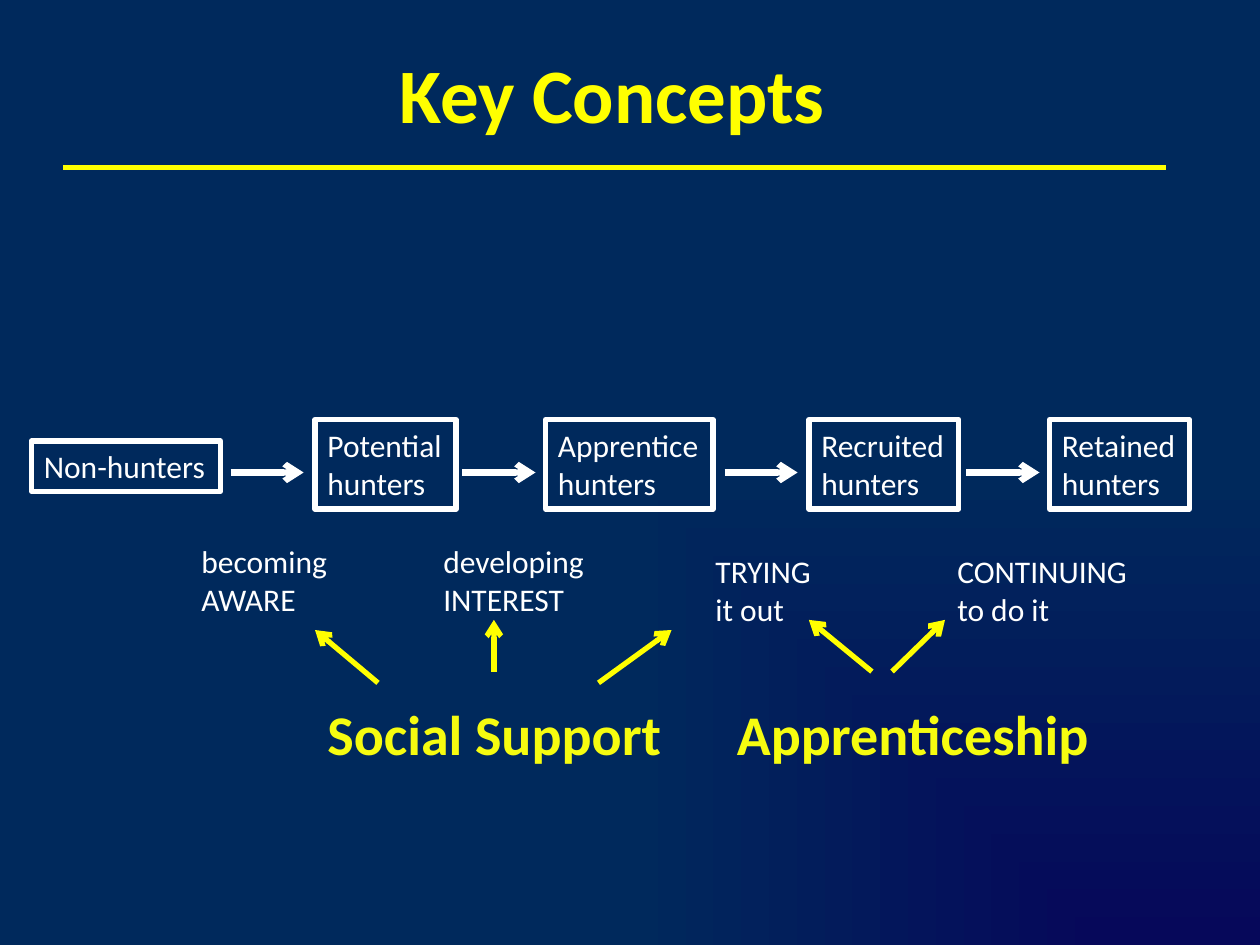
from pptx import Presentation
from pptx.dml.color import RGBColor
from pptx.enum.shapes import MSO_CONNECTOR as Connector, MSO_SHAPE as Shape
from pptx.enum.text import MSO_ANCHOR as Anchor, MSO_AUTO_SIZE as AutoSize, PP_ALIGN as Align
from pptx.oxml import parse_xml
from pptx.oxml.ns import nsdecls, qn
from pptx.util import Inches, Pt

COLORS = {"navy": "06085A", "blue": "00295C", "yellow": "FFFF00",
          "lemon": "F6FC10", "white": "FFFFFF"}


class SlideBuilder:
    """Holds the slide and the style shared by its elements."""

    font_name = "Calibri"

    def __init__(self, slide):
        self.slide = slide

    def color(self, name):
        return RGBColor.from_string(COLORS[name])

    def background(self, inner, outer):
        fill = self.slide.background.fill
        fill.gradient()
        for stop, name in zip(fill.gradient_stops, (inner, outer)):
            stop.color.rgb = self.color(name)
        # Spread the gradient from the bottom right corner
        gradient = self.slide.element.find(".//" + qn("a:gradFill"))
        gradient.replace(gradient.find(qn("a:lin")), parse_xml(
            f'<a:path {nsdecls("a")} path="rect">'
            '<a:fillToRect l="100000" t="100000"/></a:path>'))

    def set_text(self, frame, text, size, color, bold=False, align=Align.LEFT):
        frame.text = text
        for paragraph in frame.paragraphs:
            paragraph.alignment = align
            font = paragraph.font
            font.name, font.size, font.bold = self.font_name, Pt(size), bold
            font.color.rgb = self.color(color)

    def fit(self, frame):
        frame.word_wrap = False
        frame.auto_size = AutoSize.SHAPE_TO_FIT_TEXT
        frame.vertical_anchor = Anchor.TOP

    def title(self, text, left, top, width, height):
        title = self.slide.shapes.title
        title.left, title.top = Inches(left), Inches(top)
        title.width, title.height = Inches(width), Inches(height)
        frame = title.text_frame
        frame.vertical_anchor = Anchor.MIDDLE
        frame.margin_right = Inches(0.38)  # sets the heading left of centre
        self.set_text(frame, text, 44, "yellow", True, Align.CENTER)

    def box(self, text, left, top, width, height):
        shape = self.slide.shapes.add_shape(
            Shape.RECTANGLE, Inches(left), Inches(top), Inches(width), Inches(height))
        shape.shadow.inherit = False
        shape.fill.background()
        shape.line.color.rgb = self.color("white")
        shape.line.width = Pt(3)
        self.set_text(shape.text_frame, text, 18, "white")
        self.fit(shape.text_frame)

    def label(self, text, left, top, width, height, size=18, color="white", bold=False):
        shape = self.slide.shapes.add_textbox(
            Inches(left), Inches(top), Inches(width), Inches(height))
        self.set_text(shape.text_frame, text, size, color, bold)
        self.fit(shape.text_frame)

    def line(self, start, end, color="yellow", width=3, arrow=True):
        connector = self.slide.shapes.add_connector(
            Connector.STRAIGHT, *map(Inches, start + end))
        connector.line.color.rgb = self.color(color)
        connector.line.width = Pt(width)
        properties = connector.element.spPr
        if arrow:
            properties.find(qn("a:ln")).append(
                parse_xml(f'<a:tailEnd {nsdecls("a")} type="arrow"/>'))
        properties.append(parse_xml(f'<a:effectLst {nsdecls("a")}/>'))


def main():
    presentation = Presentation()
    presentation.slide_width, presentation.slide_height = Inches(10), Inches(7.5)
    slide = presentation.slides.add_slide(presentation.slide_layouts[5])
    builder = SlideBuilder(slide)
    builder.background("navy", "blue")

    # Heading and rule
    builder.title("Key Concepts", 0.5, 0.3, 9, 0.87)
    builder.line((0.5, 1.33), (9.25, 1.33), arrow=False)

    # Stages of becoming a hunter
    builder.box("Non-hunters", 0.25, 3.5, 1.5, 0.4)
    for stage, left, width in (("Potential", 2.5, 1.12), ("Apprentice", 4.33, 1.33),
                               ("Recruited", 6.42, 1.19), ("Retained", 8.33, 1.11)):
        builder.box(f"{stage}\nhunters", left, 3.33, width, 0.71)
    for left in (1.83, 3.67, 5.75, 7.67):
        builder.line((left, 3.75), (left + 0.58, 3.75), "white", 3.5)

    # Steps between the stages
    for text, left, top, width in (("becoming\nAWARE", 1.5, 4.25, 1.21),
                                   ("developing\nINTEREST", 3.42, 4.25, 1.33),
                                   ("TRYING\nit out", 5.58, 4.33, 0.97),
                                   ("CONTINUING\nto do it", 7.5, 4.33, 1.56)):
        builder.label(text, left, top, width, 0.71)

    # Supports and the steps they lead to
    for text, left, width in (("Social Support", 2.5, 2.88), ("Apprenticeship", 5.75, 3.02)):
        builder.label(text, left, 5.5, width, 0.64, 32, "lemon", True)
    for start, end in (((3, 5.42), (2.5, 5)), ((3.92, 5.33), (3.92, 4.92)),
                       ((4.75, 5.42), (5.33, 5)), ((6.92, 5.33), (6.42, 4.92)),
                       ((7.08, 5.33), (7.5, 4.92))):
        builder.line(start, end)

    presentation.save("out.pptx")


if __name__ == "__main__":
    main()
